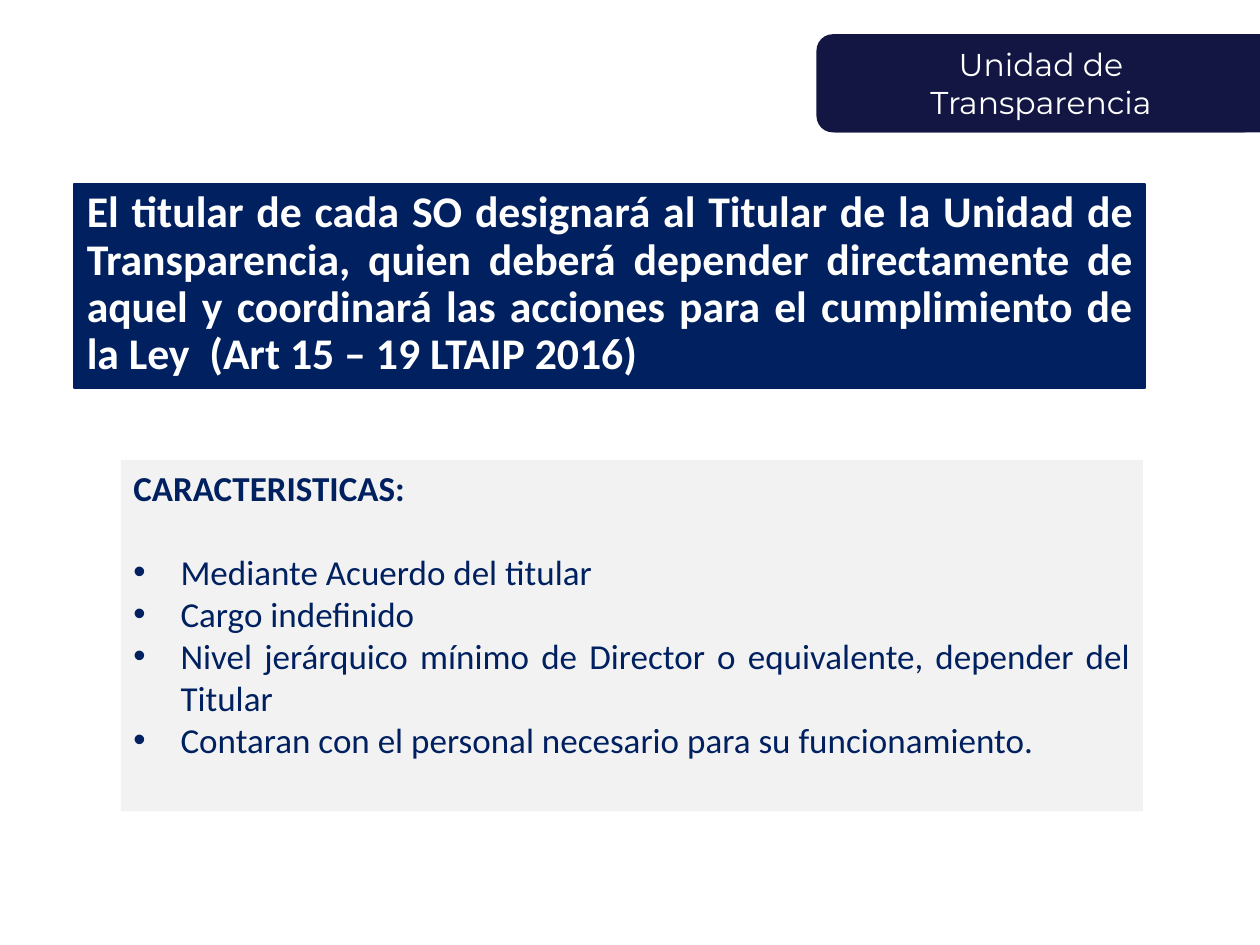
from dataclasses import dataclass

from lxml.etree import SubElement
from pptx import Presentation
from pptx.dml.color import RGBColor
from pptx.enum.shapes import MSO_SHAPE
from pptx.enum.text import MSO_ANCHOR, PP_ALIGN
from pptx.oxml.ns import qn
from pptx.util import Cm, Pt


@dataclass(frozen=True)
class Theme:
    navy: str = "002060"
    midnight: str = "131642"
    pale: str = "F2F2F2"
    white: str = "FFFFFF"
    body_font: str = "Calibri"
    tab_font: str = "Montserrat"
    statement_size: int = 25
    body_size: int = 20
    tab_size: int = 18


THEME = Theme()
BULLET_INDENT = Cm(0.95)


def add_panel(page, preset, left, top, width, height, fill, line=None):
    panel = page.shapes.add_shape(preset, Cm(left), Cm(top), Cm(width), Cm(height))
    panel.shadow.inherit = False
    panel.fill.solid()
    panel.fill.fore_color.rgb = RGBColor.from_string(fill)
    if line:
        panel.line.color.rgb = RGBColor.from_string(line)
        panel.line.width = Pt(1)
    else:
        panel.line.fill.background()
    return panel


def write(para, text, *, font, size, color, bold=False, align=PP_ALIGN.JUSTIFY,
          spacing=None, before=0, bullet=False):
    para.alignment = align
    para.space_before = Pt(before)
    if spacing:
        para.line_spacing = spacing
    if bullet:
        properties = para._p.get_or_add_pPr()
        properties.set("marL", str(BULLET_INDENT))
        properties.set("indent", str(-BULLET_INDENT))
        SubElement(properties, qn("a:buFont"), typeface="Arial")
        SubElement(properties, qn("a:buChar"), char="•")
    span = para.add_run()
    span.text = text
    span.font.name = font
    span.font.size = Pt(size)
    span.font.bold = bold
    span.font.color.rgb = RGBColor.from_string(color)


def open_text(box):
    frame = box.text_frame
    frame.word_wrap = True
    frame.vertical_anchor = MSO_ANCHOR.TOP
    return frame


def add_header_tab(page, left, top, width, height, text):
    inset = 0.36
    square_end = add_panel(page, MSO_SHAPE.ROUND_1_RECTANGLE, left + inset, top,
                           width - inset, height, THEME.midnight)
    square_end._element.spPr.xfrm.set("flipH", "1")
    add_panel(page, MSO_SHAPE.ROUNDED_RECTANGLE, left, top, width, height, THEME.midnight)
    box = page.shapes.add_textbox(Cm(left + inset), Cm(top + 0.1),
                                  Cm(width - inset - 0.25), Cm(height - 0.18))
    write(open_text(box).paragraphs[0], text, font=THEME.tab_font, size=THEME.tab_size,
          color=THEME.white, align=PP_ALIGN.CENTER)


def add_statement(page, left, top, width, height, text):
    box = add_panel(page, MSO_SHAPE.RECTANGLE, left, top, width, height,
                    THEME.navy, line=THEME.navy)
    write(open_text(box).paragraphs[0], text, font=THEME.body_font,
          size=THEME.statement_size, color=THEME.white, bold=True, spacing=0.9)


def add_features(page, left, top, width, height, heading, items):
    box = add_panel(page, MSO_SHAPE.RECTANGLE, left, top, width, height, THEME.pale)
    frame = open_text(box)
    style = dict(font=THEME.body_font, size=THEME.body_size, color=THEME.navy, spacing=Pt(24))
    write(frame.paragraphs[0], heading, bold=True, **style)
    for index, item in enumerate(items):
        write(frame.add_paragraph(), item, bullet=True,
              before=24 if index == 0 else 0, **style)


def main():
    deck = Presentation()
    deck.slide_width, deck.slide_height = Cm(25.4), Cm(19.05)
    page = deck.slides.add_slide(deck.slide_layouts[6])
    add_statement(
        page, 1.5, 3.71, 21.59, 4.11,
        "El titular de cada SO designará al Titular de la Unidad de Transparencia, "
        "quien deberá depender directamente de aquel y coordinará las acciones para "
        "el cumplimiento de la Ley  (Art 15 – 19 LTAIP 2016)",
    )
    add_features(
        page, 2.44, 9.27, 20.6, 7.09, "CARACTERISTICAS:",
        [
            "Mediante Acuerdo del titular",
            "Cargo indefinido",
            "Nivel jerárquico mínimo de Director o equivalente, depender del Titular",
            "Contaran con el personal necesario para su funcionamiento.",
        ],
    )
    add_header_tab(page, 16.46, 0.69, 8.94, 1.98, "Unidad de Transparencia")
    deck.save("out.pptx")


if __name__ == "__main__":
    main()
